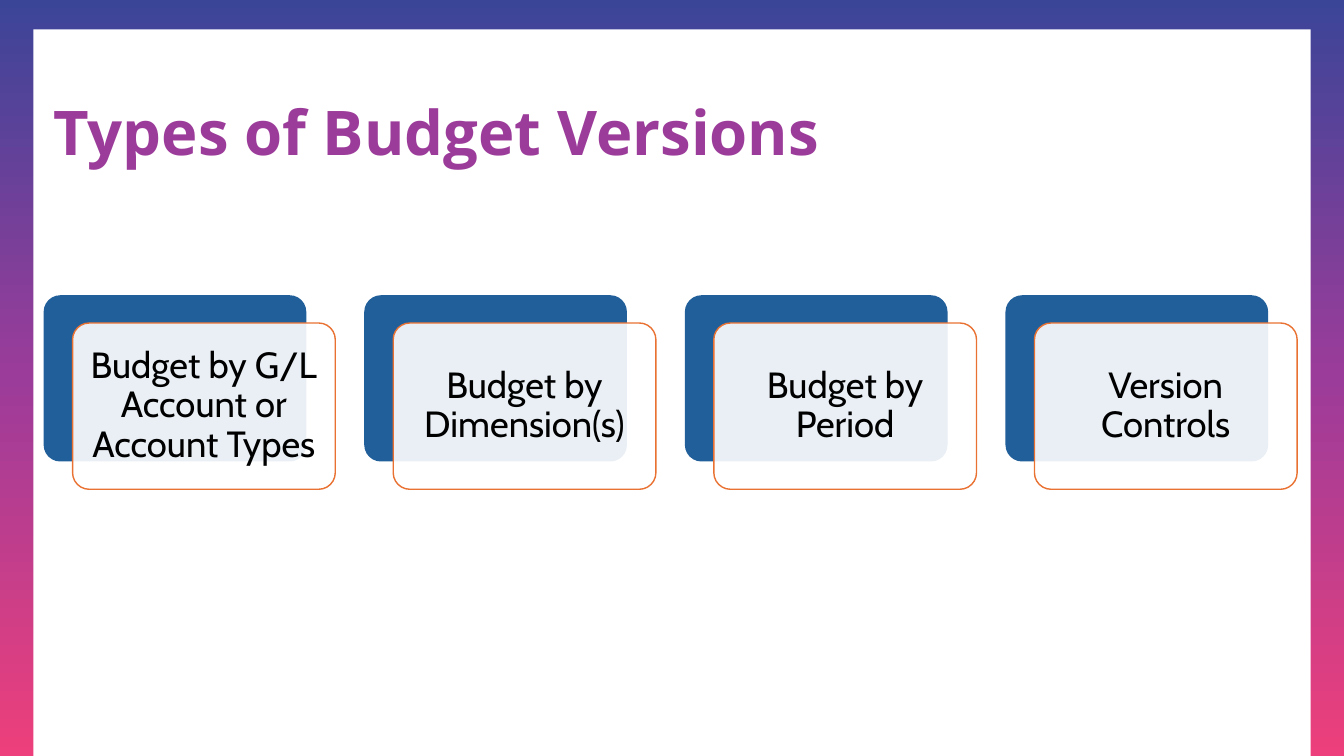
from copy import deepcopy

from pptx import Presentation
from pptx.dml.color import RGBColor
from pptx.enum.shapes import MSO_SHAPE as Shape
from pptx.enum.text import MSO_ANCHOR as Anchor, PP_ALIGN as Align
from pptx.oxml.ns import qn
from pptx.util import Cm, Pt
from lxml import etree

# Content
TITLE = "Types of Budget Versions"
BUDGET_TYPES = [
    "Budget by G/L Account or Account Types",
    "Budget by Dimension(s)",
    "Budget by Period",
    "Version Controls",
]

# Colours and fonts
WHITE = RGBColor(0xFF, 0xFF, 0xFF)
BLACK = RGBColor(0x00, 0x00, 0x00)
INDIGO = RGBColor(0x3B, 0x45, 0x98)
PURPLE = RGBColor(0x9C, 0x3C, 0x9A)
PINK = RGBColor(0xED, 0x3F, 0x7B)
BLUE = RGBColor(0x21, 0x5F, 0x9A)
ORANGE = RGBColor(0xE9, 0x71, 0x32)
FRAME_STOPS = [(0, INDIGO), (0.5, PURPLE), (1, PINK)]
TITLE_FONT, CARD_FONT = "Open Sans", "Cabin"

# Layout in centimetres
SLIDE_WIDTH, SLIDE_HEIGHT = 33.87, 19.05
PANEL_LEFT, PANEL_TOP = 0.84, 0.74
CARD_LEFT, CARD_TOP = 1.1, 7.44
CARD_WIDTH, CARD_HEIGHT = 6.62, 4.19
CARD_PITCH = 8.08
FRONT_SHIFT_X, FRONT_SHIFT_Y = 0.73, 0.7
CARD_INSET = 0.28


def add_block(slide, kind, left, top, width, height, color=None):
    shape = slide.shapes.add_shape(kind, Cm(left), Cm(top), Cm(width), Cm(height))
    shape.shadow.inherit = False
    shape.line.fill.background()
    if color is not None:
        shape.fill.solid()
        shape.fill.fore_color.rgb = color
    return shape


def add_frame(slide):
    frame = add_block(slide, Shape.RECTANGLE, 0, 0, SLIDE_WIDTH, SLIDE_HEIGHT)
    frame.fill.gradient()
    frame.fill.gradient_angle = 270
    first_stop = frame.fill._fill._gradFill.find(qn("a:gsLst"))[0]
    first_stop.addnext(deepcopy(first_stop))
    for stop, (position, color) in zip(frame.fill.gradient_stops, FRAME_STOPS):
        stop.position = position
        stop.color.rgb = color
    add_block(slide, Shape.RECTANGLE, PANEL_LEFT, PANEL_TOP,
              SLIDE_WIDTH - 2 * PANEL_LEFT, SLIDE_HEIGHT - PANEL_TOP, WHITE)


def write(shape, text, font_name, size, color, align, bold=False):
    frame = shape.text_frame
    frame.word_wrap = True
    frame.vertical_anchor = Anchor.MIDDLE
    frame.text = text
    paragraph = frame.paragraphs[0]
    paragraph.alignment = align
    paragraph.line_spacing = 0.9
    font = paragraph.runs[0].font
    font.name, font.size, font.bold = font_name, Pt(size), bold
    font.color.rgb = color


def add_card(slide, left, text):
    back = add_block(slide, Shape.ROUNDED_RECTANGLE, left, CARD_TOP,
                     CARD_WIDTH, CARD_HEIGHT, BLUE)
    front = add_block(slide, Shape.ROUNDED_RECTANGLE, left + FRONT_SHIFT_X,
                      CARD_TOP + FRONT_SHIFT_Y, CARD_WIDTH, CARD_HEIGHT, WHITE)
    back.adjustments[0] = front.adjustments[0] = 0.1
    front.line.color.rgb = ORANGE
    front.line.width = Pt(1)

    # The front card is 90% opaque
    fill_color = front.fill._xPr.find(qn("a:solidFill"))[0]
    etree.SubElement(fill_color, qn("a:alpha")).set("val", "90000")

    frame = front.text_frame
    frame.margin_left = frame.margin_right = Cm(CARD_INSET)
    frame.margin_top = frame.margin_bottom = Cm(CARD_INSET)
    write(front, text, CARD_FONT, 26, BLACK, Align.CENTER)


def main():
    presentation = Presentation()
    presentation.slide_width = Cm(SLIDE_WIDTH)
    presentation.slide_height = Cm(SLIDE_HEIGHT)
    slide = presentation.slides.add_slide(presentation.slide_layouts[6])

    # Gradient frame and title
    add_frame(slide)
    title = slide.shapes.add_textbox(Cm(1.1), Cm(1.02), Cm(31.62), Cm(4.8))
    write(title, TITLE, TITLE_FONT, 44, PURPLE, Align.LEFT, bold=True)

    # Row of cards
    for index, text in enumerate(BUDGET_TYPES):
        add_card(slide, CARD_LEFT + index * CARD_PITCH, text)

    presentation.save("out.pptx")


if __name__ == "__main__":
    main()
